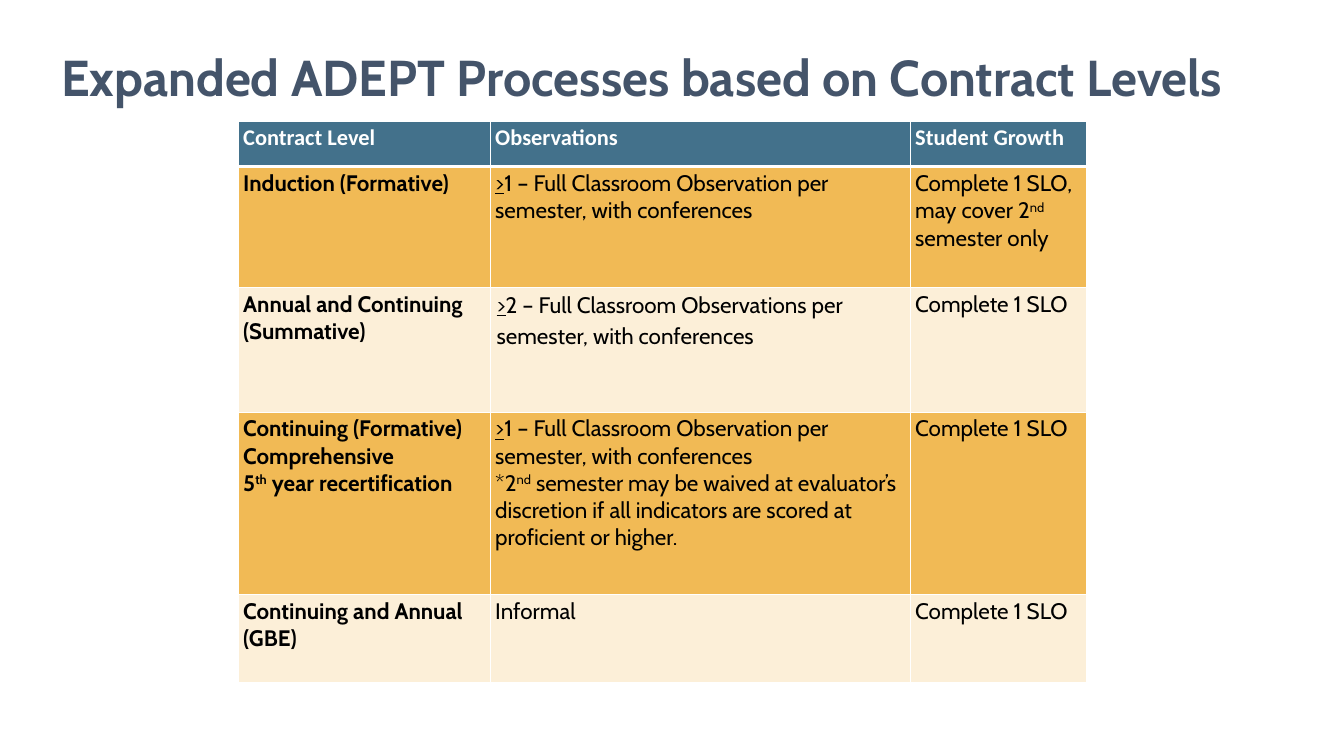
from lxml.etree import SubElement
from pptx import Presentation
from pptx.dml.color import RGBColor
from pptx.enum.text import MSO_ANCHOR, PP_ALIGN
from pptx.oxml.ns import qn
from pptx.util import Inches, Pt

COLORS = {
    "title": "44546A",
    "header": "43718B",
    "dark_band": "F1BA55",
    "light_band": "FCEFD8",
    "text": "000000",
    "white": "FFFFFF",
}
COLUMN_WIDTHS = [3.75, 6.25, 2.62]
ROW_HEIGHTS = [0.68, 1.8, 1.85, 2.72, 1.31]
SPACED_CELL = (2, 1)

# A cell is a list of paragraphs, a paragraph a list of runs;
# a run is plain text or a (text, style) pair.
AT_LEAST = (">", "underline")
ORDINAL_ND = ("nd", "superscript")
ONE_SLO = [["Complete 1 SLO"]]
ONE_OBSERVATION = [AT_LEAST, "1 – Full Classroom Observation per semester, with conferences"]
ROWS = [
    [[["Contract Level"]], [["Observations"]], [["Student Growth"]]],
    [
        [["Induction (Formative)"]],
        [ONE_OBSERVATION],
        [["Complete 1 SLO, may cover 2", ORDINAL_ND, " semester only"]],
    ],
    [
        [["Annual and Continuing (Summative)"]],
        [[AT_LEAST, "2 – Full Classroom Observations per semester, with conferences"]],
        ONE_SLO,
    ],
    [
        [["Continuing (Formative)"], ["Comprehensive"],
         ["5", ("th", "superscript"), " year recertification"]],
        [ONE_OBSERVATION,
         ["*2", ORDINAL_ND, " semester may be waived at evaluator’s discretion "
          "if all indicators are scored at proficient or higher."]],
        ONE_SLO,
    ],
    [[["Continuing and Annual (GBE)"]], [["Informal"]], ONE_SLO],
]


def add_run(paragraph, content, size, font_name, color, bold):
    text, style = content if isinstance(content, tuple) else (content, None)
    run = paragraph.add_run()
    run.text = text
    font = run.font
    font.size, font.name, font.bold = Pt(size), font_name, bold
    font.color.rgb = RGBColor.from_string(COLORS[color])
    if style == "underline":
        font.underline = True
    elif style == "superscript":
        font._element.set("baseline", "30000")


def set_borders(cell, top, bottom):
    """Draw white cell borders; the lines must come before the fill in the XML."""
    properties = cell._tc.get_or_add_tcPr()
    for side, width in (("L", 1), ("R", 1), ("T", top), ("B", bottom)):
        line = SubElement(properties, qn(f"a:ln{side}"), w=str(Pt(width)))
        fill = SubElement(line, qn("a:solidFill"))
        SubElement(fill, qn("a:srgbClr"), val=COLORS["white"])


def set_margins(cell, horizontal, vertical):
    cell.margin_left = cell.margin_right = Inches(horizontal)
    cell.margin_top = cell.margin_bottom = Inches(vertical)


def fill_cell(cell, paragraphs, row, column):
    is_header = row == 0
    set_margins(cell, 0.07, 0.05)
    set_borders(cell, top=3 if row == 1 else 1, bottom=3 if is_header else 1)
    band = "header" if is_header else "dark_band" if row % 2 else "light_band"
    cell.fill.solid()
    cell.fill.fore_color.rgb = RGBColor.from_string(COLORS[band])
    for index, runs in enumerate(paragraphs):
        frame = cell.text_frame
        paragraph = frame.add_paragraph() if index else frame.paragraphs[0]
        for content in runs:
            add_run(paragraph, content, 24, "Calibri" if is_header else "Cabin",
                    "white" if is_header else "text", is_header or column == 0)


def add_title(slide, text):
    title = slide.shapes.title
    title.left, title.top = Inches(0.81), Inches(0.6)
    title.width, title.height = Inches(19), Inches(1.2)
    frame = title.text_frame
    frame.word_wrap = True
    frame.vertical_anchor = MSO_ANCHOR.MIDDLE
    paragraph = frame.paragraphs[0]
    paragraph.alignment = PP_ALIGN.LEFT
    paragraph.line_spacing = 0.9
    add_run(paragraph, text, 54, "Cabin", "title", True)


def add_contract_table(slide):
    table = slide.shapes.add_table(
        len(ROWS), len(COLUMN_WIDTHS), Inches(3.55), Inches(1.8),
        Inches(sum(COLUMN_WIDTHS)), Inches(sum(ROW_HEIGHTS))).table
    for column, width in zip(table.columns, COLUMN_WIDTHS):
        column.width = Inches(width)
    for row, height in zip(table.rows, ROW_HEIGHTS):
        row.height = Inches(height)
    for row, cells in enumerate(ROWS):
        for column, paragraphs in enumerate(cells):
            fill_cell(table.cell(row, column), paragraphs, row, column)

    spaced_cell = table.cell(*SPACED_CELL)
    set_margins(spaced_cell, 0.09, 0)
    paragraph = spaced_cell.text_frame.paragraphs[0]
    paragraph.line_spacing = 1.15
    paragraph.space_after = Pt(10)


def main():
    presentation = Presentation()
    presentation.slide_width = Inches(20)
    presentation.slide_height = Inches(11.25)
    slide = presentation.slides.add_slide(presentation.slide_layouts[5])
    add_title(slide, "Expanded ADEPT Processes based on Contract Levels")
    add_contract_table(slide)
    presentation.save("out.pptx")


if __name__ == "__main__":
    main()
